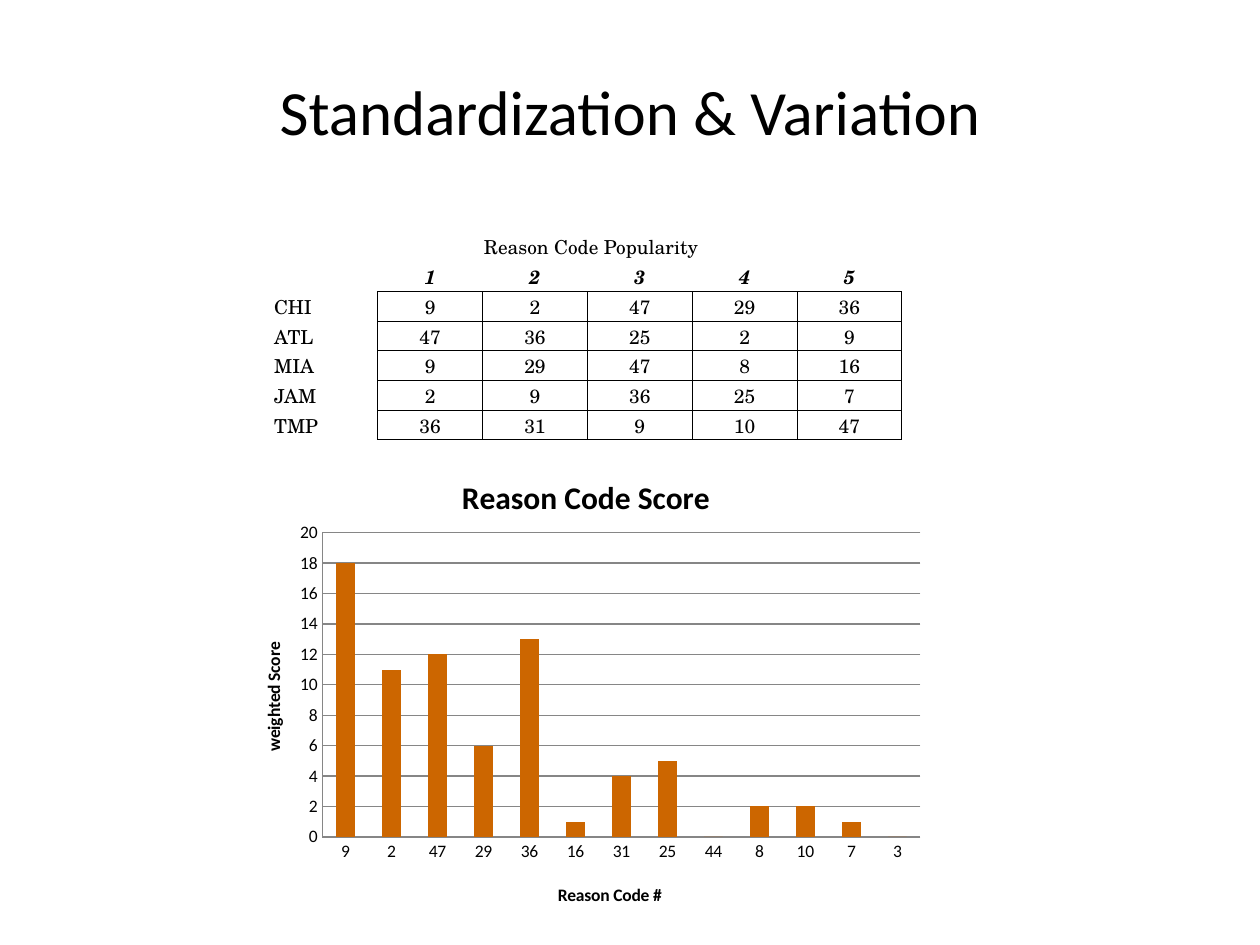
from lxml import etree
from pptx import Presentation
from pptx.chart.data import CategoryChartData
from pptx.dml.color import RGBColor
from pptx.enum.chart import XL_CHART_TYPE, XL_TICK_MARK
from pptx.enum.text import MSO_ANCHOR, PP_ALIGN
from pptx.oxml import parse_xml
from pptx.oxml.ns import nsdecls, qn
from pptx.util import Pt

COLUMNS = XL_CHART_TYPE.COLUMN_CLUSTERED
NO_TICK = XL_TICK_MARK.NONE
BOTTOM, MIDDLE = MSO_ANCHOR.BOTTOM, MSO_ANCHOR.MIDDLE
LEFT, CENTER = PP_ALIGN.LEFT, PP_ALIGN.CENTER
BLACK = RGBColor(0x00, 0x00, 0x00)
GRAY = RGBColor(0x86, 0x86, 0x86)
ORANGE = RGBColor(0xCC, 0x66, 0x00)
SERIF, SANS = "TeX Gyre Schola", "Calibri"


def format_font(font, **values):
    for name, value in values.items():
        setattr(font, name, value)
    font.color.rgb = BLACK


def place(element, left, top, width=None, height=None):
    layout = element.find(qn("c:layout"))
    if layout is None:
        layout = parse_xml(f"<c:layout {nsdecls('c')}/>")
        before = element.find(qn("c:tx"))
        element.insert(0 if before is None else element.index(before) + 1, layout)
    for child in list(layout):
        layout.remove(child)
    manual = etree.SubElement(layout, qn("c:manualLayout"))
    parts = {"xMode": "edge", "yMode": "edge", "x": left, "y": top}
    if width is not None:
        parts = {"layoutTarget": "inner", **parts, "w": width, "h": height}
    for name, value in parts.items():
        etree.SubElement(manual, qn(f"c:{name}")).set("val", str(value))


deck = Presentation()
deck.slide_width, deck.slide_height = Pt(720), Pt(540)
page = deck.slides.add_slide(deck.slide_layouts[5])

title = page.shapes.title
title_box = {"left": Pt(54), "top": Pt(18), "width": Pt(612), "height": Pt(90)}
for name, value in title_box.items():
    setattr(title, name, value)
title.text_frame.text = "Standardization & Variation"
title.text_frame.vertical_anchor = MIDDLE
para = title.text_frame.paragraphs[0]
para.alignment = CENTER
format_font(para.runs[0].font, size=Pt(36), name=SANS)

rows = [
    ["", "", "Reason Code Popularity", "", "", ""],
    ["", "1", "2", "3", "4", "5"],
    ["CHI", "9", "2", "47", "29", "36"],
    ["ATL", "47", "36", "25", "2", "9"],
    ["MIA", "9", "29", "47", "8", "16"],
    ["JAM", "2", "9", "36", "25", "7"],
    ["TMP", "36", "31", "9", "10", "47"],
]
frame = page.shapes.add_table(7, 6, Pt(156), Pt(132), Pt(360), Pt(100.1))
table = frame.table
table.first_row = table.horz_banding = False
for column in table.columns:
    column.width = Pt(59.9)
for row in table.rows:
    row.height = Pt(14.3)
table.cell(0, 2).merge(table.cell(0, 4))

cell_format = {
    "vertical_anchor": BOTTOM,
    "margin_left": Pt(0.7),
    "margin_right": Pt(0.7),
    "margin_top": Pt(0.7),
    "margin_bottom": Pt(0),
}
for r, texts in enumerate(rows):
    for c, text in enumerate(texts):
        cell = table.cell(r, c)
        for name, value in cell_format.items():
            setattr(cell, name, value)
        para = cell.text_frame.paragraphs[0]
        para.alignment = CENTER if r > 0 and c > 0 else LEFT
        if text:
            span = para.add_run()
            span.text = text
            format_font(span.font, size=Pt(11), name=SERIF, bold=r == 1, italic=r == 1)
        else:
            end = etree.SubElement(para._p, qn("a:endParaRPr"), sz="1100")
            etree.SubElement(end, qn("a:latin"), typeface=SERIF)
        boxed = r > 1 and c > 0
        sides = {
            "L": boxed,
            "R": r > 1,
            "T": boxed,
            "B": boxed or (r == 1 and c > 0),
        }
        properties = cell._tc.get_or_add_tcPr()
        for side, drawn in sides.items():
            line = etree.SubElement(properties, qn(f"a:ln{side}"), w=str(Pt(0.5)))
            if drawn:
                fill = etree.SubElement(line, qn("a:solidFill"))
                etree.SubElement(fill, qn("a:srgbClr"), val=str(BLACK))
            else:
                etree.SubElement(line, qn("a:noFill"))
        cell.fill.background()

data = CategoryChartData()
data.categories = ["9", "2", "47", "29", "36", "16", "31", "25", "44", "8", "10", "7", "3"]
data.add_series("Series 1", [18, 11, 12, 6, 13, 1, 4, 5, 0, 2, 2, 1, 0])
chart = page.shapes.add_chart(COLUMNS, Pt(132), Pt(252), Pt(402), Pt(276), data).chart
format_font(chart.font, size=Pt(10), name=SANS)
chart.has_legend = False

plot = chart.plots[0]
plot.gap_width = 150
plot.vary_by_categories = False
series = plot.series[0]
series.format.fill.solid()
series.format.fill.fore_color.rgb = ORANGE
place(chart._chartSpace.chart.plotArea, 0.13, 0.19, 0.85, 0.63)

values, categories = chart.value_axis, chart.category_axis
values.minimum_scale, values.maximum_scale, values.major_unit = 0, 20, 2
values.has_major_gridlines = True
for axis in (values, categories):
    axis.major_tick_mark = axis.minor_tick_mark = NO_TICK
for lines in (values, categories, values.major_gridlines):
    lines.format.line.color.rgb = GRAY
    lines.format.line.width = Pt(0.75)

headings = [
    (chart.chart_title, "Reason Code Score", 18, 0.32, 0.06),
    (values.axis_title, "weighted Score", 10, 0.04, 0.41),
    (categories.axis_title, "Reason Code #", 10, 0.46, 0.91),
]
for heading, text, size, left, top in headings:
    heading.text_frame.text = text
    span = heading.text_frame.paragraphs[0].runs[0]
    format_font(span.font, size=Pt(size), name=SANS, bold=True)
    place(heading._element, left, top)
values.axis_title.text_frame._txBody.find(qn("a:bodyPr")).set("rot", "-5400000")

deck.save("out.pptx")
